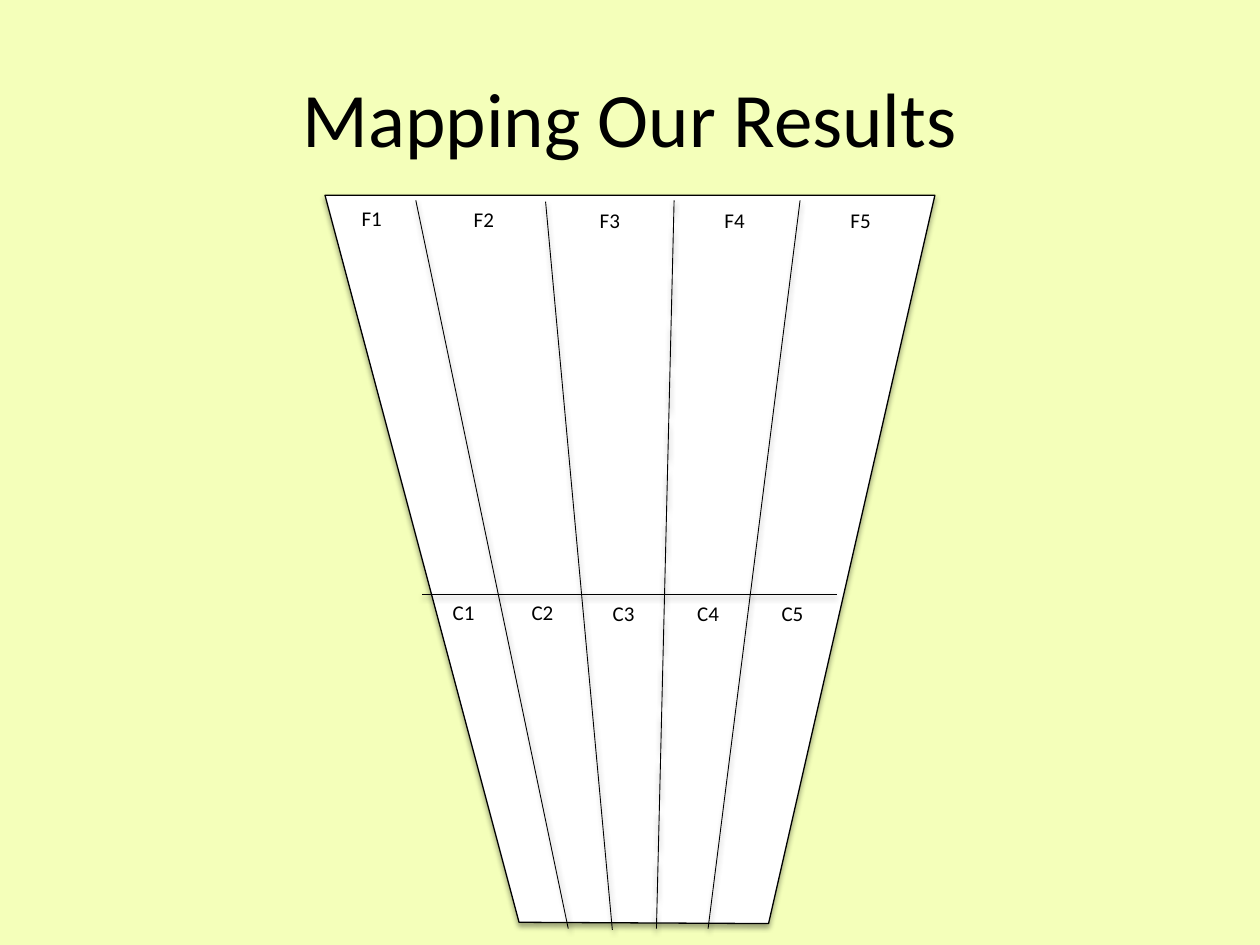
from dataclasses import dataclass

from lxml import etree
from pptx import Presentation
from pptx.dml.color import RGBColor
from pptx.enum.shapes import MSO_CONNECTOR
from pptx.enum.text import MSO_ANCHOR, MSO_AUTO_SIZE, PP_ALIGN
from pptx.oxml.ns import qn
from pptx.util import Inches, Pt

STRAIGHT = MSO_CONNECTOR.STRAIGHT
MIDDLE = MSO_ANCHOR.MIDDLE
GROW = MSO_AUTO_SIZE.SHAPE_TO_FIT_TEXT
CENTER = PP_ALIGN.CENTER


@dataclass(frozen=True)
class Theme:
    """Colours, font and sizes of the slide."""
    background: str = "F4FFBA"
    panel: str = "FFFFFF"
    ink: str = "000000"
    font: str = "Calibri"
    title_size: int = 44
    label_size: int = 12
    outline_width: float = 0.75
    divider_width: float = 0.5


def write_text(frame, text, *, size, font, color, align=CENTER):
    """Write one formatted paragraph into a text frame."""
    para = frame.paragraphs[0]
    para.alignment = align
    span = para.add_run()
    span.text = text
    span.font.size = Pt(size)
    span.font.name = font
    span.font.color.rgb = RGBColor.from_string(color)


class SlideBuilder:
    """Draws themed elements on the current slide."""

    def __init__(self, page, theme):
        """Set the background and open the group for the diagram."""
        self.page = page
        self.theme = theme
        fill = page.background.fill
        fill.solid()
        fill.fore_color.rgb = RGBColor.from_string(theme.background)
        self.diagram = page.shapes.add_group_shape().shapes

    def style_line(self, shape, width, *, alpha, distance):
        """Give a shape its ink line and a soft shadow straight below."""
        shape.line.width = Pt(width)
        shape.line.color.rgb = RGBColor.from_string(self.theme.ink)
        effects = etree.SubElement(shape._element.spPr, qn("a:effectLst"))
        shadow = etree.SubElement(
            effects, qn("a:outerShdw"), blurRad=str(Pt(3.1)),
            dist=str(Pt(distance)), dir="5400000", rotWithShape="0")
        color = etree.SubElement(shadow, qn("a:srgbClr"), val=self.theme.ink)
        etree.SubElement(color, qn("a:alpha"), val=str(alpha * 1000))

    def title(self, text, left, top, width, height):
        """Fill and place the title placeholder."""
        box = self.page.shapes.title
        box.left, box.top = Inches(left), Inches(top)
        box.width, box.height = Inches(width), Inches(height)
        box.text_frame.vertical_anchor = MIDDLE
        write_text(box.text_frame, text, size=self.theme.title_size,
                   font=self.theme.font, color=self.theme.ink)

    def outline(self, corners):
        """Draw a filled polygon through the corners."""
        start, *others = [(Inches(x), Inches(y)) for x, y in corners]
        builder = self.diagram.build_freeform(*start)
        builder.add_line_segments(others, close=True)
        shape = builder.convert_to_shape()
        shape.fill.solid()
        shape.fill.fore_color.rgb = RGBColor.from_string(self.theme.panel)
        self.style_line(shape, self.theme.outline_width, alpha=35, distance=1.8)

    def divider(self, start, end):
        """Draw a thin straight line between two points."""
        line = self.diagram.add_connector(
            STRAIGHT, *[Inches(value) for value in (*start, *end)])
        self.style_line(line, self.theme.divider_width, alpha=38, distance=1.6)

    def label(self, text, left, top, width=0.7, height=0.2):
        """Add a small centred label."""
        box = self.diagram.add_textbox(
            Inches(left), Inches(top), Inches(width), Inches(height))
        box.text_frame.word_wrap = True
        box.text_frame.auto_size = GROW
        write_text(box.text_frame, text, size=self.theme.label_size,
                   font=self.theme.font, color=self.theme.ink)


def main():
    """Build and save the results map."""
    deck = Presentation()
    deck.slide_width, deck.slide_height = Inches(10), Inches(7.5)
    page = deck.slides.add_slide(deck.slide_layouts[5])
    slide = SlideBuilder(page, Theme())

    slide.title("Mapping Our Results", 0.5, 0.3, 9, 1.25)
    slide.outline([(4.12, 7.32), (2.58, 1.55), (7.42, 1.55), (6.1, 7.33)])
    slide.divider((3.35, 4.72), (6.64, 4.72))
    for top_x, bottom_x, top in [(3.3, 4.51, 1.59), (4.33, 4.86, 1.6),
                                 (5.35, 5.21, 1.59), (6.35, 5.62, 1.59)]:
        slide.divider((top_x, top), (bottom_x, top + 5.78))

    far_places = [(2.6, 1.58), (3.49, 1.59), (4.49, 1.6), (5.48, 1.6), (6.48, 1.6)]
    close_places = [(3.33, 4.71), (4.08, 4.71, 0.45, 0.3), (4.6, 4.72),
                    (5.27, 4.72), (5.94, 4.72)]
    for letter, places in (("F", far_places), ("C", close_places)):
        for number, place in enumerate(places, start=1):
            slide.label(f"{letter}{number}", *place)

    deck.save("out.pptx")


if __name__ == "__main__":
    main()
